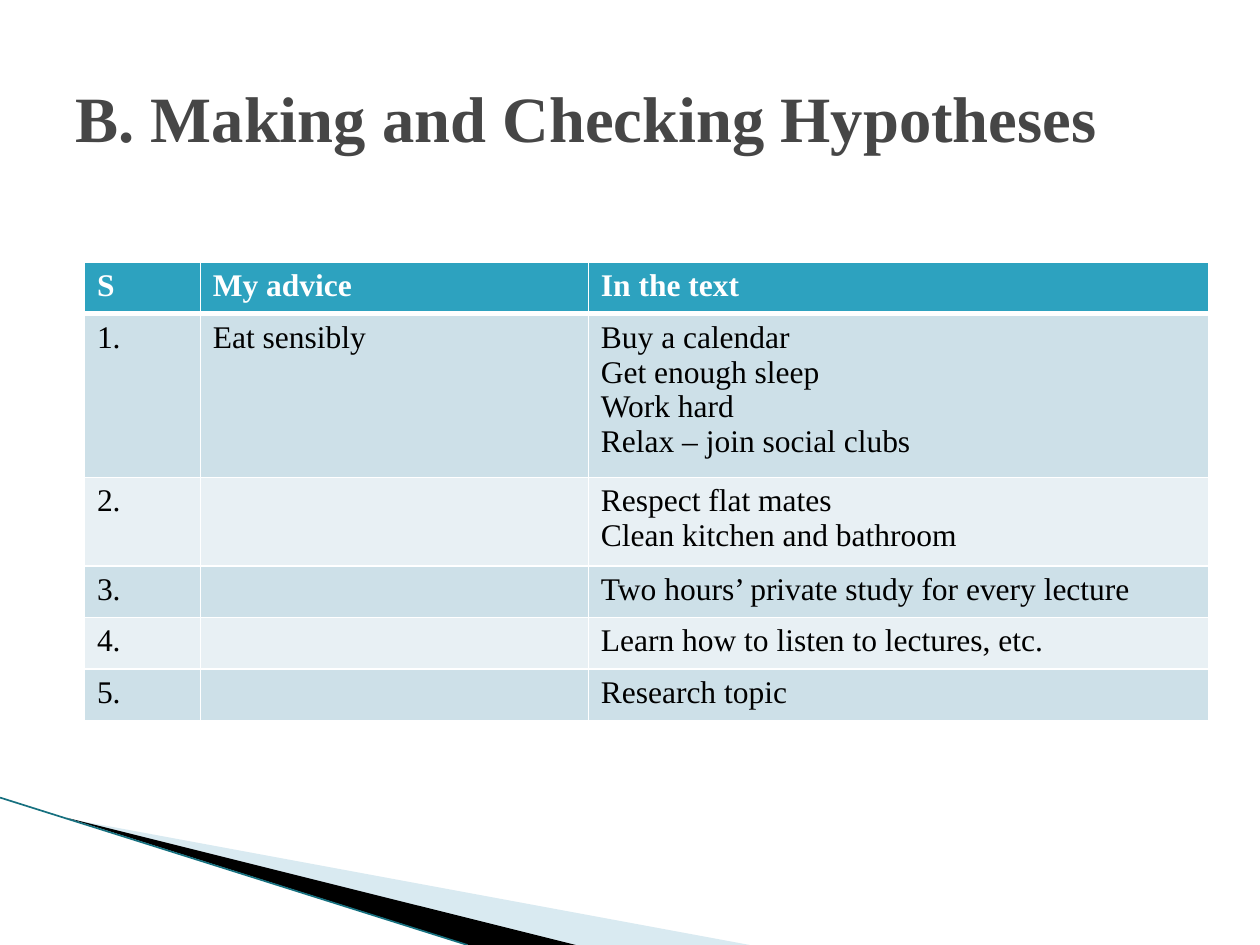
from pptx import Presentation
from pptx.dml.color import RGBColor
from pptx.enum.text import MSO_ANCHOR
from pptx.oxml.ns import qn
from pptx.util import Inches, Pt
from lxml.etree import SubElement

FONT = "Times New Roman"
TITLE = "B. Making and Checking Hypotheses"
ROWS = [
    ("S", "My advice", "In the text"),
    ("1.", "Eat sensibly",
     "Buy a calendar\nGet enough sleep\nWork hard\nRelax – join social clubs"),
    ("2.", "", "Respect flat mates\nClean kitchen and bathroom"),
    ("3.", "", "Two hours’ private study for every lecture"),
    ("4.", "", "Learn how to listen to lectures, etc."),
    ("5.", "", "Research topic"),
]
COL_WIDTHS = (0.92, 3.08, 4.92)
ROW_HEIGHT, LINE_HEIGHT, CELL_MARGINS = 0.41, 0.27, 0.1
HEADER, BANDS = "2DA2BF", ("CDE0E8", "E8F0F4")
# Corner points, colour, opacity in percent
WEDGES = [
    ([(0.55, 6.5), (5.95, 7.5), (4.56, 7.5)], "A0CBDC", 40),
    ([(0.53, 6.49), (4.57, 7.5), (3.72, 7.5)], "000000", 100),
]


def rgb(color):
    return RGBColor.from_string(color)


def write(tf, text, size=18, color="000000", bold=False):
    for i, line in enumerate(text.split("\n")):
        p = tf.paragraphs[0] if i == 0 else tf.add_paragraph()
        p.font.name, p.font.size, p.font.bold = FONT, Pt(size), bold
        p.font.color.rgb = rgb(color)
        if line:
            r = p.add_run()
            r.text = line
            r.font.name, r.font.size, r.font.bold = FONT, Pt(size), bold
            r.font.color.rgb = rgb(color)


def add_wedge(s, points, color, opacity):
    start, *rest = [(Inches(x), Inches(y)) for x, y in points]
    builder = s.shapes.build_freeform(*start)
    builder.add_line_segments(rest, close=True)
    sp = builder.convert_to_shape()
    sp.shadow.inherit = False
    sp.line.fill.background()
    sp.fill.solid()
    sp.fill.fore_color.rgb = rgb(color)
    if opacity < 100:
        clr = sp.fill._xPr.find(".//" + qn("a:srgbClr"))
        SubElement(clr, qn("a:alpha"), val=str(opacity * 1000))


def set_borders(cell, bottom):
    """White borders; they must precede the fill in the cell properties."""
    tcPr = cell._tc.get_or_add_tcPr()
    for side, width in (("L", 1), ("R", 1), ("T", 1), ("B", bottom)):
        ln = SubElement(tcPr, qn("a:ln" + side), w=str(Pt(width)))
        fill = SubElement(ln, qn("a:solidFill"))
        SubElement(fill, qn("a:srgbClr"), val="FFFFFF")


def add_advice_table(s):
    table = s.shapes.add_table(
        len(ROWS), len(COL_WIDTHS), Inches(0.67), Inches(2.08),
        Inches(sum(COL_WIDTHS)), Inches(ROW_HEIGHT * len(ROWS))).table
    for column, width in zip(table.columns, COL_WIDTHS):
        column.width = Inches(width)
    for i, row in enumerate(ROWS):
        lines = max(text.count("\n") + 1 for text in row)
        table.rows[i].height = Inches(
            max(ROW_HEIGHT, lines * LINE_HEIGHT + CELL_MARGINS))
        is_header = i == 0
        for j, text in enumerate(row):
            cell = table.cell(i, j)
            set_borders(cell, bottom=3 if is_header else 1)
            cell.fill.solid()
            cell.fill.fore_color.rgb = rgb(HEADER if is_header else BANDS[(i - 1) % 2])
            write(cell.text_frame, text, bold=is_header,
                  color="FFFFFF" if is_header else "000000")


def main():
    prs = Presentation()
    prs.slide_width, prs.slide_height = Inches(10), Inches(7.5)
    s = prs.slides.add_slide(prs.slide_layouts[6])

    for wedge in WEDGES:
        add_wedge(s, *wedge)
    edge = s.shapes.add_connector(1, 0, Inches(6.33), Inches(3.71), Inches(7.5))
    edge.line.color.rgb = rgb("16707F")
    edge.line.width = Pt(0.95)
    SubElement(edge._element.spPr, qn("a:effectLst"))

    tf = s.shapes.add_textbox(Inches(0.5), Inches(0.3), Inches(9), Inches(1.25)).text_frame
    tf.word_wrap = True
    tf.vertical_anchor = MSO_ANCHOR.MIDDLE
    write(tf, TITLE, size=36.9, color="464646", bold=True)

    add_advice_table(s)
    prs.save("out.pptx")


if __name__ == "__main__":
    main()
